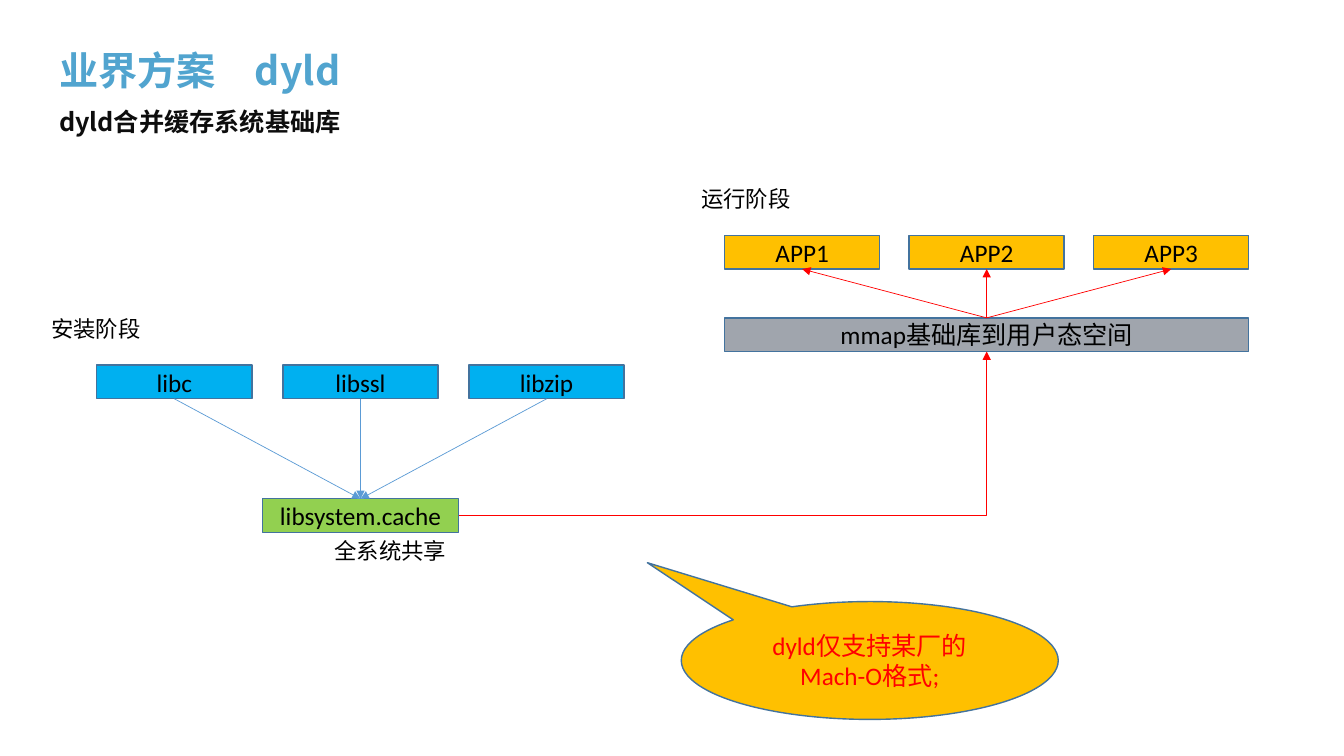
from dataclasses import dataclass

from lxml import etree
from pptx import Presentation
from pptx.dml.color import RGBColor
from pptx.enum.shapes import MSO_CONNECTOR, MSO_SHAPE
from pptx.enum.text import MSO_ANCHOR, MSO_AUTO_SIZE, PP_ALIGN
from pptx.oxml.ns import qn
from pptx.util import Cm, Pt

RECT, CALLOUT = MSO_SHAPE.RECTANGLE, MSO_SHAPE.OVAL_CALLOUT
STRAIGHT, ELBOW = MSO_CONNECTOR.STRAIGHT, MSO_CONNECTOR.ELBOW
LEFT, CENTER = PP_ALIGN.LEFT, PP_ALIGN.CENTER
TOP, MIDDLE = MSO_ANCHOR.TOP, MSO_ANCHOR.MIDDLE
SIDE_TOP, SIDE_BOTTOM, SIDE_RIGHT = 0, 2, 3

CJK_FONT, LATIN_FONT = "Noto Sans CJK SC", "Calibri"
BLUE, GREEN, AMBER, GREY = "00B0F0", "92D050", "FFC000", "A0A5AD"
OUTLINE, ARROW_BLUE, RED, BLACK = "43739E", "5B9BD5", "FF0000", "000000"


@dataclass
class Box:
    text: str
    left: float
    top: float
    width: float
    fill: str
    height: float = 0.85
    kind: int = RECT
    color: str = BLACK


@dataclass
class Label:
    text: str
    left: float
    top: float
    width: float


def rgb(value: str) -> RGBColor:
    return RGBColor.from_string(value)


def set_text(sp, text: str, *, size: float, color: str = BLACK,
             font: str = CJK_FONT, bold: bool = False, align=LEFT,
             anchor=TOP, wrap: bool = True, spacing: float = 1.0) -> None:
    tf = sp.text_frame
    tf.word_wrap = wrap
    tf.vertical_anchor = anchor
    p = tf.paragraphs[0]
    p.alignment = align
    p.line_spacing = spacing
    r = p.add_run()
    r.text = text
    r.font.name = font
    r.font.size = Pt(size)
    r.font.bold = bold
    r.font.color.rgb = rgb(color)
    ea = etree.SubElement(r.font._element, qn("a:ea"))
    ea.set("typeface", CJK_FONT)


def add_box(slide, box: Box):
    sp = slide.shapes.add_shape(box.kind, Cm(box.left), Cm(box.top),
                                Cm(box.width), Cm(box.height))
    sp.shadow.inherit = False
    sp.fill.solid()
    sp.fill.fore_color.rgb = rgb(box.fill)
    sp.line.color.rgb = rgb(OUTLINE)
    sp.line.width = Pt(1)
    set_text(sp, box.text, size=18, color=box.color, font=LATIN_FONT,
             align=CENTER, anchor=MIDDLE)
    return sp


def add_label(slide, label: Label) -> None:
    sp = slide.shapes.add_textbox(Cm(label.left), Cm(label.top),
                                  Cm(label.width), Cm(0.94))
    set_text(sp, label.text, size=16, wrap=False)
    sp.text_frame.auto_size = MSO_AUTO_SIZE.SHAPE_TO_FIT_TEXT


def add_arrow(slide, start, start_side: int, end, end_side: int,
              color: str, kind=STRAIGHT):
    line = slide.shapes.add_connector(kind, 0, 0, 0, 0)
    line.begin_connect(start, start_side)
    line.end_connect(end, end_side)
    line.line.color.rgb = rgb(color)
    line.line.width = Pt(0.5)
    props = line._element.spPr
    etree.SubElement(props.find(qn("a:ln")), qn("a:tailEnd")).set("type", "triangle")
    etree.SubElement(props, qn("a:effectLst"))
    return line


def add_headings(slide) -> None:
    title = slide.shapes.title
    title.left, title.top = Cm(1.24), Cm(0.94)
    title.width, title.height = Cm(31.45), Cm(1.8)
    set_text(title, "业界方案　dyld", size=28, color="51A4CF", bold=True,
             anchor=MIDDLE, spacing=0.9)
    subtitle = slide.shapes.add_textbox(Cm(1.24), Cm(2.64), Cm(31.45), Cm(1.4))
    set_text(subtitle, "dyld合并缓存系统基础库", size=18, color="0D0D0D",
             bold=True, spacing=0.9)


def main() -> None:
    prs = Presentation()
    prs.slide_width, prs.slide_height = Cm(33.87), Cm(19.05)
    slide = prs.slides.add_slide(prs.slide_layouts[5])
    add_headings(slide)

    libs = [add_box(slide, Box(name, 2.44 + 4.69 * i, 9.2, 3.91, BLUE))
            for i, name in enumerate(["libc", "libssl", "libzip"])]
    cache = add_box(slide, Box("libsystem.cache", 6.61, 12.57, 4.95, GREEN))
    apps = [add_box(slide, Box(f"APP{i + 1}", 18.26 + 4.65 * i, 5.93, 3.91, AMBER))
            for i in range(3)]
    mmap = add_box(slide, Box("mmap基础库到用户态空间", 18.26, 8.01, 13.21, GREY))

    for lib in libs:
        add_arrow(slide, lib, SIDE_BOTTOM, cache, SIDE_TOP, ARROW_BLUE)
    for app in apps:
        add_arrow(slide, mmap, SIDE_TOP, app, SIDE_BOTTOM, RED)
    elbow = add_arrow(slide, cache, SIDE_RIGHT, mmap, SIDE_BOTTOM, RED, ELBOW)
    # A single right-angle bend
    elbow._element.spPr.find(qn("a:prstGeom")).set("prst", "bentConnector2")

    for label in (Label("全系统共享", 8.18, 13.41, 3.35),
                  Label("安装阶段", 1.04, 7.82, 2.79),
                  Label("运行阶段", 17.42, 4.55, 2.79)):
        add_label(slide, label)

    callout = add_box(slide, Box("dyld仅支持某厂的Mach-O格式;", 17.17, 15.16, 9.5,
                                 AMBER, height=2.97, kind=CALLOUT, color=RED))
    callout.adjustments[0] = -0.59
    callout.adjustments[1] = -0.83

    prs.save("out.pptx")


if __name__ == "__main__":
    main()
